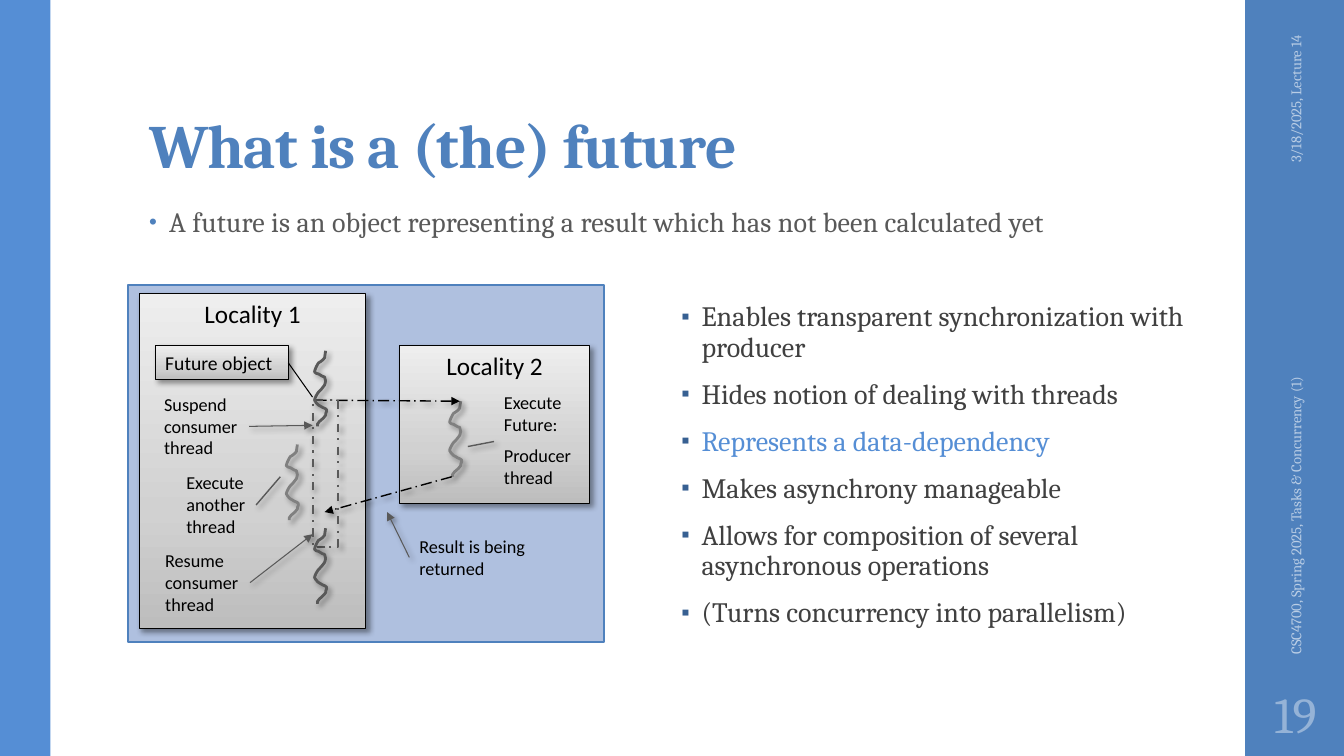
import collections
import copy

import pptx
import pptx.dml.color
import pptx.enum.dml
import pptx.enum.shapes
import pptx.enum.text
import pptx.oxml.ns
import pptx.util
from lxml import etree

SCALE = 9144
Box = collections.namedtuple("Box", "x y w h")
qn = pptx.oxml.ns.qn
Align = pptx.enum.text.PP_ALIGN
Anchor = pptx.enum.text.MSO_ANCHOR
Size = pptx.enum.text.MSO_AUTO_SIZE
Dash = pptx.enum.dml.MSO_LINE


class Theme:
    serif, sans = "Cambria", "Calibri"
    blue, sky, navy = "4F81BD", "558ED5", "376092"
    panel, pale, mist = "AFC0DF", "B9CDE5", "95B3D7"
    black, dark, gray, mid = "000000", "404040", "595959", "808080"
    shade = ((0, "BDBDBD"), (0.35, "D1D1D1"), (1, "EEEEEE"))
    title, page, body, head, tag, label, side = 44, 36, 20, 18, 14, 13, 10.5


WAVE = [
    (11, 0), (10, 2), (11, 5), (10, 7), (8, 10), (4, 12), (4, 12),
    (3, 13), (0, 19), (0, 21), (1, 22), (2, 23), (4, 23),
    (6, 25), (10, 26), (10, 26), (10, 27), (11, 29), (11, 30),
    (11, 32), (10, 33), (10, 34), (8, 37), (6, 39), (4, 41),
    (3, 42), (0, 47), (0, 49), (1, 51), (2, 52), (3, 53),
    (3, 54), (5, 54), (6, 55), (8, 57), (13, 57), (12, 60),
    (11, 62), (11, 63), (11, 64), (9, 67), (5, 70), (5, 70),
    (2, 74), (3, 72), (3, 75),
]


def px(*nums):
    return [round(n * SCALE) for n in nums]


def inner(box, x, y, w, h):
    return Box(box.x + x, box.y + y, w, h)


def rgb(color):
    return pptx.dml.color.RGBColor.from_string(color)


def child(node, tag, **attrs):
    return etree.SubElement(node, qn(tag), attrs)


def write(para, text, size, color, face, bold=False, track=0):
    run = para.add_run()
    run.text = text
    font = run.font
    font.size, font.name, font.bold = pptx.util.Pt(size), face, bold
    font.color.rgb = rgb(color)
    if track:
        run._r.get_or_add_rPr().set("spc", str(track))


def bullet(para, mark, color, size):
    props = para._p.get_or_add_pPr()
    indent = px(20)[0]
    props.set("marL", str(indent))
    props.set("indent", str(-indent))
    child(child(props, "a:buClr"), "a:srgbClr", val=color)
    child(props, "a:buSzPct", val=str(size * 1000))
    child(props, "a:buFont", typeface="Arial")
    child(props, "a:buChar", char=mark)


def lines(frame, texts, size, color, face, align=Align.LEFT):
    for i, text in enumerate(texts):
        para = frame.paragraphs[0] if i == 0 else frame.add_paragraph()
        para.alignment = align
        write(para, text, size, color, face)


def frame(slide, box, anchor=Anchor.TOP, wrap=True, turn=0):
    shape = slide.shapes.add_textbox(*px(*box))
    shape.rotation = turn
    area = shape.text_frame
    area.word_wrap, area.vertical_anchor = wrap, anchor
    return area


def stroke(line, color, width, dash=None):
    line.color.rgb, line.width = rgb(color), pptx.util.Pt(width)
    if dash:
        line.dash_style = dash


def shadow(shape):
    props = shape.element.spPr
    node = props.find(qn("a:effectLst"))
    if node is None:
        node = child(props, "a:effectLst")
    cast = child(node, "a:outerShdw", blurRad="50800", dist="38100", dir="2700000", algn="tl", rotWithShape="0")
    child(child(cast, "a:srgbClr", val=Theme.black), "a:alpha", val="40000")


def rect(slide, box, color=None):
    kind = pptx.enum.shapes.MSO_SHAPE.RECTANGLE
    shape = slide.shapes.add_shape(kind, *px(*box))
    shape.shadow.inherit = False
    shape.line.fill.background()
    if color:
        shape.fill.solid()
        shape.fill.fore_color.rgb = rgb(color)
    else:
        shape.fill.background()
    return shape


def card(slide, box, text, size, align=Align.CENTER, wrap=True):
    shape = rect(slide, box)
    shape.fill.gradient()
    shape.fill.gradient_angle = 90
    stops = shape.element.spPr.find(".//" + qn("a:gsLst"))
    stops.append(copy.deepcopy(stops[-1]))
    for stop, (place, color) in zip(shape.fill.gradient_stops, Theme.shade):
        stop.position, stop.color.rgb = place, rgb(color)
    stroke(shape.line, Theme.black, 0.75)
    shadow(shape)
    area = shape.text_frame
    area.vertical_anchor, area.word_wrap = Anchor.TOP, wrap
    lines(area, [text], size, Theme.black, Theme.sans, align)


def link(slide, box, ends, color, width, arrow=False, dash=None, cast=True):
    x1, y1, x2, y2 = ends
    kind = pptx.enum.shapes.MSO_CONNECTOR.STRAIGHT
    spots = px(box.x + x1, box.y + y1, box.x + x2, box.y + y2)
    shape = slide.shapes.add_connector(kind, *spots)
    stroke(shape.line, color, width, dash)
    props = shape.element.spPr
    if arrow:
        child(props.find(qn("a:ln")), "a:tailEnd", type="triangle")
    child(props, "a:effectLst")
    if cast:
        shadow(shape)


def wave(slide, box, x, y, color):
    spots = [px(box.x + x + a, box.y + y + b) for a, b in WAVE]
    form = slide.shapes.build_freeform(*spots[0])
    form.add_line_segments(spots[1:], close=False)
    shape = form.convert_to_shape()
    steps = shape.element.spPr.findall(".//" + qn("a:lnTo"))
    track = steps[0].getparent()
    for i in range(0, len(steps), 3):
        bend = child(track, "a:cubicBezTo")
        for step in steps[i:i + 3]:
            bend.append(step[0])
            track.remove(step)
    shape.fill.background()
    shape.shadow.inherit = False
    stroke(shape.line, color, 2)
    shadow(shape)


def label(slide, box, texts):
    area = frame(slide, box, wrap=False)
    area.auto_size = Size.SHAPE_TO_FIT_TEXT
    lines(area, texts, Theme.label, Theme.black, Theme.sans)
    return area


def chart(slide, box):
    stroke(rect(slide, box, Theme.panel).line, Theme.blue, 1.5)
    card(slide, inner(box, 11, 8, 225, 333), "Locality 1", Theme.head)
    wave(slide, box, 157, 158, Theme.mid)
    for x, y, w, h, text in (
        (26, 102, 94, 76, "Suspend|consumer|thread"),
        (48, 180, 85, 76, "Execute|another|thread"),
        (27, 257, 94, 76, "Resume|consumer|thread"),
        (279, 243, 131, 54, "Result is being|returned"),
    ):
        label(slide, inner(box, x, y, w, h), text.split("|"))
    for ends in ((120, 140, 183, 139), (121, 295, 183, 247), (279, 270, 257, 225)):
        link(slide, box, ends, Theme.gray, 0.75, arrow=True)
    card(slide, inner(box, 269, 60, 189, 157), "Locality 2", Theme.head)
    wave(slide, box, 319, 115, Theme.mid)
    area = label(slide, inner(box, 363, 100, 92, 109), ["Execute", "Future:", "Producer", "thread"])
    area.paragraphs[2].space_before = pptx.util.Pt(7)
    for ends in ((337, 160, 363, 155), (127, 218, 151, 190)):
        link(slide, box, ends, Theme.gray, 1)
    for ends in ((186, 114, 329, 115), (321, 190, 195, 225)):
        link(slide, box, ends, Theme.black, 1, True, Dash.LONG_DASH_DOT)
    loop = rect(slide, inner(box, 183, 114, 25, 146))
    stroke(loop.line, Theme.gray, 1.5, Dash.DASH_DOT)
    shadow(loop)
    card(slide, inner(box, 27, 60, 132, 34), "Future object", Theme.tag, Align.LEFT, False)
    link(slide, box, (183, 111, 159, 77), Theme.black, 0.75, cast=False)
    for y in (65, 241):
        wave(slide, box, 185, y, Theme.gray)


def title(slide, box):
    shape = slide.shapes.title
    shape.left, shape.top, shape.width, shape.height = px(*box)
    area = shape.text_frame
    area.auto_size = Size.NONE
    area.word_wrap, area.vertical_anchor = True, Anchor.BOTTOM
    area.margin_left, area.margin_top, area.margin_right, area.margin_bottom = px(10, 3, 10, 5)
    para = area.paragraphs[0]
    para.alignment, para.line_spacing = Align.LEFT, 0.9
    write(para, "What is a (the) future", Theme.title, Theme.blue, Theme.serif, True, -50)


def intro(slide, box):
    para = frame(slide, box).paragraphs[0]
    para.line_spacing = 0.95
    para.space_before, para.space_after = pptx.util.Pt(14), pptx.util.Pt(2)
    bullet(para, "•", Theme.blue, 80)
    write(para, "A future is an object representing a result which has not been calculated yet",
          Theme.body, Theme.gray, Theme.serif, track=10)


def points(slide, box):
    area = frame(slide, box, Anchor.MIDDLE)
    lines(area, [
        "Enables transparent synchronization with producer",
        "Hides notion of dealing with threads",
        "Represents a data-dependency",
        "Makes asynchrony manageable",
        "Allows for composition of several asynchronous operations",
        "(Turns concurrency into parallelism)",
    ], Theme.body, Theme.dark, Theme.serif)
    for para in area.paragraphs:
        para.line_spacing, para.space_before = 0.9, pptx.util.Pt(12)
        bullet(para, "▪", Theme.navy, 85)
    area.paragraphs[2].runs[0].font.color.rgb = rgb(Theme.sky)


def rail(slide, box):
    rect(slide, box, Theme.blue)
    date = frame(slide, inner(box, -54, 109, 208, 40), Anchor.MIDDLE, turn=270)
    lines(date, ["3/18/2025, Lecture 14"], Theme.side, Theme.pale, Theme.serif, Align.RIGHT)
    course = frame(slide, inner(box, -146, 443, 392, 40), Anchor.MIDDLE, turn=270)
    lines(course, ["CSC4700, Spring 2025, Tasks & Concurrency (1)"], Theme.side, Theme.pale, Theme.serif)
    page = frame(slide, inner(box, 0, 675, box.w, 65), Anchor.MIDDLE)
    page.margin_left = page.margin_right = px(5)[0]
    lines(page, ["19"], Theme.page, Theme.mist, Theme.serif, Align.CENTER)


def main():
    deck = pptx.Presentation()
    deck.slide_width, deck.slide_height = px(1333, 750)
    slide = deck.slides.add_slide(deck.slide_layouts[5])
    rail(slide, Box(1235, 0, 100, 750))
    rect(slide, Box(0, 0, 50, 750), Theme.sky)
    title(slide, Box(138, 32, 1060, 153))
    intro(slide, Box(138, 200, 1044, 476))
    chart(slide, Box(127, 283, 472, 354))
    points(slide, Box(666, 283, 554, 358))
    deck.save("out.pptx")


if __name__ == "__main__":
    main()
